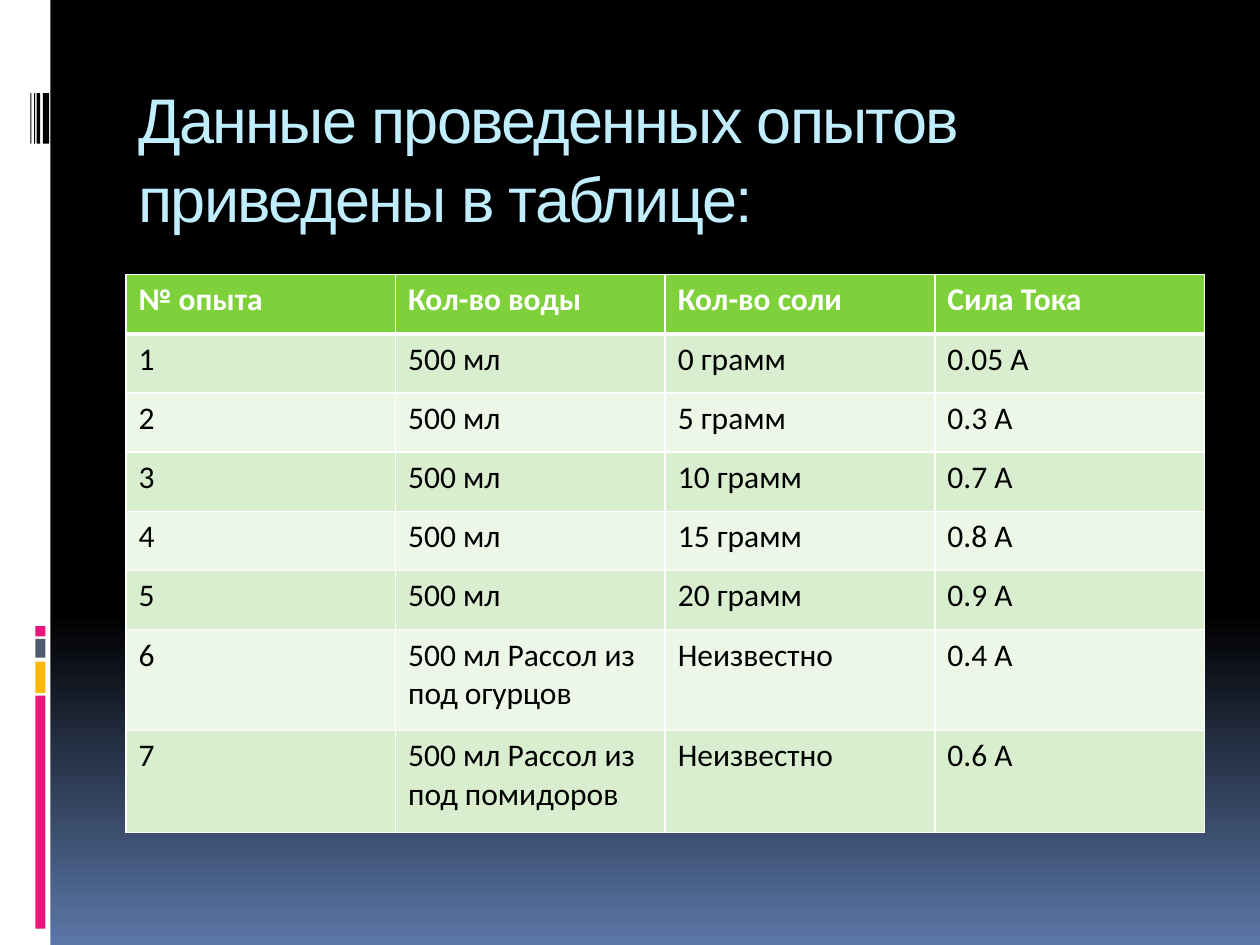
from lxml import etree
from pptx import Presentation
from pptx.dml.color import RGBColor
from pptx.enum import shapes, text
from pptx.oxml import ns
from pptx.util import Inches, Pt

# Content
TITLE = "Данные проведенных опытов приведены в таблице:"
HEADER = ("№ опыта", "Кол-во воды", "Кол-во соли", "Сила Тока")
EXPERIMENTS = [
    ("500 мл", "0 грамм", "0.05 А"),
    ("500 мл", "5 грамм", "0.3 А"),
    ("500 мл", "10 грамм", "0.7 А"),
    ("500 мл", "15 грамм", "0.8 А"),
    ("500 мл", "20 грамм", "0.9 А"),
    ("500 мл Рассол из под огурцов", "Неизвестно", "0.4 А"),
    ("500 мл Рассол из под помидоров", "Неизвестно", "0.6 А"),
]
ROW_HEIGHTS = [0.47] * 6 + [0.8, 0.81]
COLUMN_WIDTH = 2.14

# Left strip: (left, top, width, height, colour)
SIDEBAR = [(0, 0, 0.4, 7.5, "FFFFFF")]
COLOUR_BARS = [(0.28, top, 0.08, height, colour) for top, height, colour in (
    (5.52, 1.85, "EA157A"), (5.25, 0.25, "FEB80A"),
    (5.07, 0.15, "4E5B6F"), (4.97, 0.08, "EA157A"))]
BARCODE = [(left, 0.74, width, 0.4, "000000") for left, width in (
    (0.34, 0.05), (0.29, 0.03), (0.27, 0.01), (0.24, 0.01))]


def rgb(colour):
    return RGBColor.from_string(colour)


def format_font(font, colour, **values):
    font.color.rgb = rgb(colour)
    for name, value in values.items():
        setattr(font, name, value)


def add_bar(slide, left, top, width, height, colour):
    bar = slide.shapes.add_shape(
        shapes.MSO_SHAPE.RECTANGLE, *map(Inches, (left, top, width, height)))
    bar.shadow.inherit = False
    bar.fill.solid()
    bar.fill.fore_color.rgb = rgb(colour)
    bar.line.fill.background()


def set_borders(cell, widths):
    properties = cell._tc.get_or_add_tcPr()
    for position, (side, width) in enumerate(widths.items()):
        line = etree.Element(ns.qn(f"a:ln{side}"), w=str(Pt(width)))
        fill = etree.SubElement(line, ns.qn("a:solidFill"))
        etree.SubElement(fill, ns.qn("a:srgbClr"), val="FFFFFF")
        properties.insert(position, line)


def add_title(slide):
    title = slide.shapes.title
    title.left, title.top, title.width, title.height = map(Inches, (1, 0.56, 8.5, 1))
    frame = title.text_frame
    frame.text = TITLE
    frame.word_wrap = True
    frame.auto_size = text.MSO_AUTO_SIZE.NONE
    frame.vertical_anchor = text.MSO_ANCHOR.TOP
    paragraph = frame.paragraphs[0]
    paragraph.alignment = text.PP_ALIGN.LEFT
    paragraph.line_spacing = 1.05
    run = paragraph.runs[0]
    format_font(run.font, "C1EEFF", name="Arial", size=Pt(36))
    run._r.get_or_add_rPr().set("spc", "-100")


def add_results(slide):
    rows = [HEADER] + [(str(n), *row) for n, row in enumerate(EXPERIMENTS, 1)]
    columns = len(HEADER)
    table = slide.shapes.add_table(
        len(rows), columns, Inches(1), Inches(2.18),
        Inches(COLUMN_WIDTH * columns), Inches(sum(ROW_HEIGHTS))).table
    for column in table.columns:
        column.width = Inches(COLUMN_WIDTH)
    for r, values in enumerate(rows):
        table.rows[r].height = Inches(ROW_HEIGHTS[r])
        is_header = r == 0
        background = "7FD13B" if is_header else ("ECF7E8", "D8EECE")[r % 2]
        for c, value in enumerate(values):
            cell = table.cell(r, c)
            cell.text = value
            cell.fill.solid()
            cell.fill.fore_color.rgb = rgb(background)
            format_font(cell.text_frame.paragraphs[0].runs[0].font,
                        "FFFFFF" if is_header else "000000",
                        name="Calibri", size=Pt(18), bold=is_header)
            set_borders(cell, {"L": 1, "R": 1, "T": 3 if r == 1 else 1,
                               "B": 3 if is_header else 1})


def main():
    deck = Presentation()
    deck.slide_width, deck.slide_height = Inches(10), Inches(7.5)
    slide = deck.slides.add_slide(deck.slide_layouts[5])

    # Background: black down to 65 %, then fading to blue
    backdrop = slide.background.fill
    backdrop.gradient()
    backdrop.gradient_angle = 270
    for stop, position, colour in zip(
            backdrop.gradient_stops, (0.65, 1), ("000000", "5B77A8")):
        stop.position = position
        stop.color.rgb = rgb(colour)

    for bar in SIDEBAR + COLOUR_BARS + BARCODE:
        add_bar(slide, *bar)
    add_title(slide)
    add_results(slide)
    deck.save("out.pptx")


if __name__ == "__main__":
    main()
